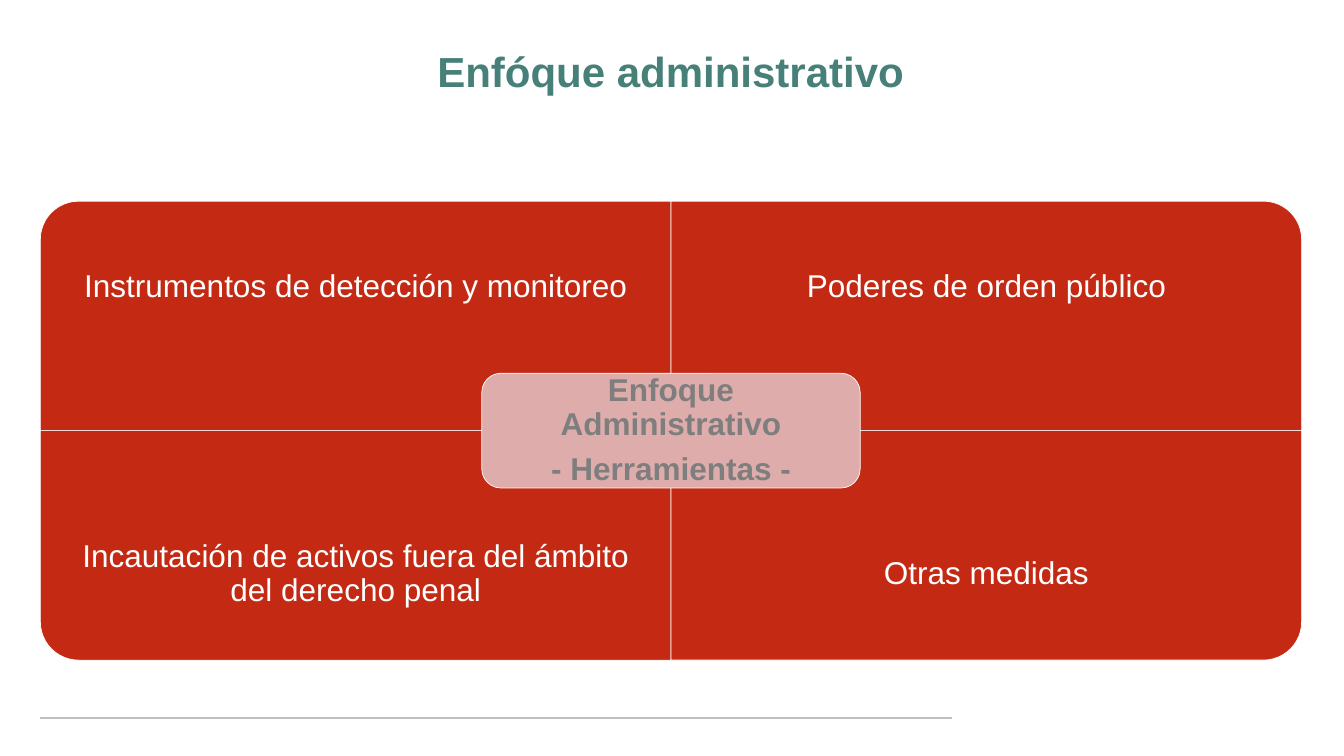
from pptx import Presentation
from pptx.dml.color import RGBColor
from pptx.enum.shapes import MSO_CONNECTOR, MSO_SHAPE
from pptx.enum.text import MSO_ANCHOR, MSO_AUTO_SIZE, PP_ALIGN
from pptx.oxml.ns import qn
from pptx.util import Pt
from lxml import etree


def paint(color_format, value):
    color_format.rgb = RGBColor.from_string(value)


def write(box, lines, size, color, bold, inset_x, inset_y, space_after):
    frame = box.text_frame
    frame.text = "\n".join(lines)
    frame.word_wrap = True
    frame.auto_size = MSO_AUTO_SIZE.NONE
    frame.vertical_anchor = MSO_ANCHOR.MIDDLE
    frame.margin_left = frame.margin_right = Pt(inset_x)
    frame.margin_top = frame.margin_bottom = Pt(inset_y)
    for para in frame.paragraphs:
        para.alignment = PP_ALIGN.CENTER
        para.line_spacing = 0.9
        para.space_before = Pt(0)
        para.space_after = Pt(space_after)
        for span in para.runs:
            span.font.name = "Arial"
            span.font.size = Pt(size)
            span.font.bold = bold
            paint(span.font.color, color)


deck = Presentation()
deck.slide_width = Pt(1919.52)
deck.slide_height = Pt(1080)
page = deck.slides.add_slide(deck.slide_layouts[5])

left = 57.6
footer_y = 1026
footer_line = page.shapes.add_connector(
    MSO_CONNECTOR.STRAIGHT, Pt(left), Pt(footer_y), Pt(1359.4), Pt(footer_y))
footer_line.line.width = Pt(2.25)
paint(footer_line.line.color, "BFBFBF")
etree.SubElement(footer_line._element.spPr, qn("a:effectLst"))

title = page.shapes.title
title.left, title.top = Pt(left), Pt(39.6)
title.width, title.height = Pt(1800.7), Pt(133.2)
write(title, ["Enfóque administrativo"], 60, "468078", True, 14.4, 7.2, 0)

top = 287.4
cell_width, cell_height = 900.7, 327.8
label_height = cell_height * 0.75
middle_x, middle_y = left + cell_width, top + cell_height
gap_after = 15.75

quadrants = [
    (0, 0, 270, "Instrumentos de detección y monitoreo"),
    (1, 0, 0, "Poderes de orden público"),
    (0, 1, 180, "Incautación de activos fuera del ámbito del derecho penal"),
    (1, 1, 90, "Otras medidas"),
]
matrix = page.shapes.add_group_shape().shapes
panels = []
for column, row, rotation, label in quadrants:
    x = left + column * cell_width
    y = top + row * cell_height
    sideways = rotation % 180 == 90
    width, height = (cell_height, cell_width) if sideways else (cell_width, cell_height)
    panel = matrix.add_shape(
        MSO_SHAPE.ROUND_1_RECTANGLE,
        Pt(x + (cell_width - width) / 2), Pt(y + (cell_height - height) / 2),
        Pt(width), Pt(height))
    panel.rotation = rotation
    panels.append((panel, "C42A13"))

    label_y = y + row * (cell_height - label_height)
    box = matrix.add_textbox(Pt(x), Pt(label_y), Pt(cell_width), Pt(label_height))
    write(box, [label], 45, "FFFFFF", False, 25.2, 25.2, gap_after)

hub_width, hub_height = cell_width * 0.6, cell_height / 2
hub_x, hub_y = middle_x - hub_width / 2, middle_y - hub_height / 2
hub = matrix.add_shape(
    MSO_SHAPE.ROUNDED_RECTANGLE, Pt(hub_x), Pt(hub_y), Pt(hub_width), Pt(hub_height))
panels.append((hub, "DEADAB"))

hub_pad = 8
hub_label = matrix.add_textbox(
    Pt(hub_x + hub_pad), Pt(hub_y + hub_pad),
    Pt(hub_width - 2 * hub_pad), Pt(hub_height - 2 * hub_pad))
write(hub_label, ["Enfoque Administrativo", "- Herramientas -"],
      45, "7E7E7E", True, 13.7, 13.7, gap_after)

for panel, color in panels:
    panel.shadow.inherit = False
    panel.fill.solid()
    paint(panel.fill.fore_color, color)
    panel.line.width = Pt(1)
    paint(panel.line.color, "FFFFFF")

deck.save("out.pptx")
